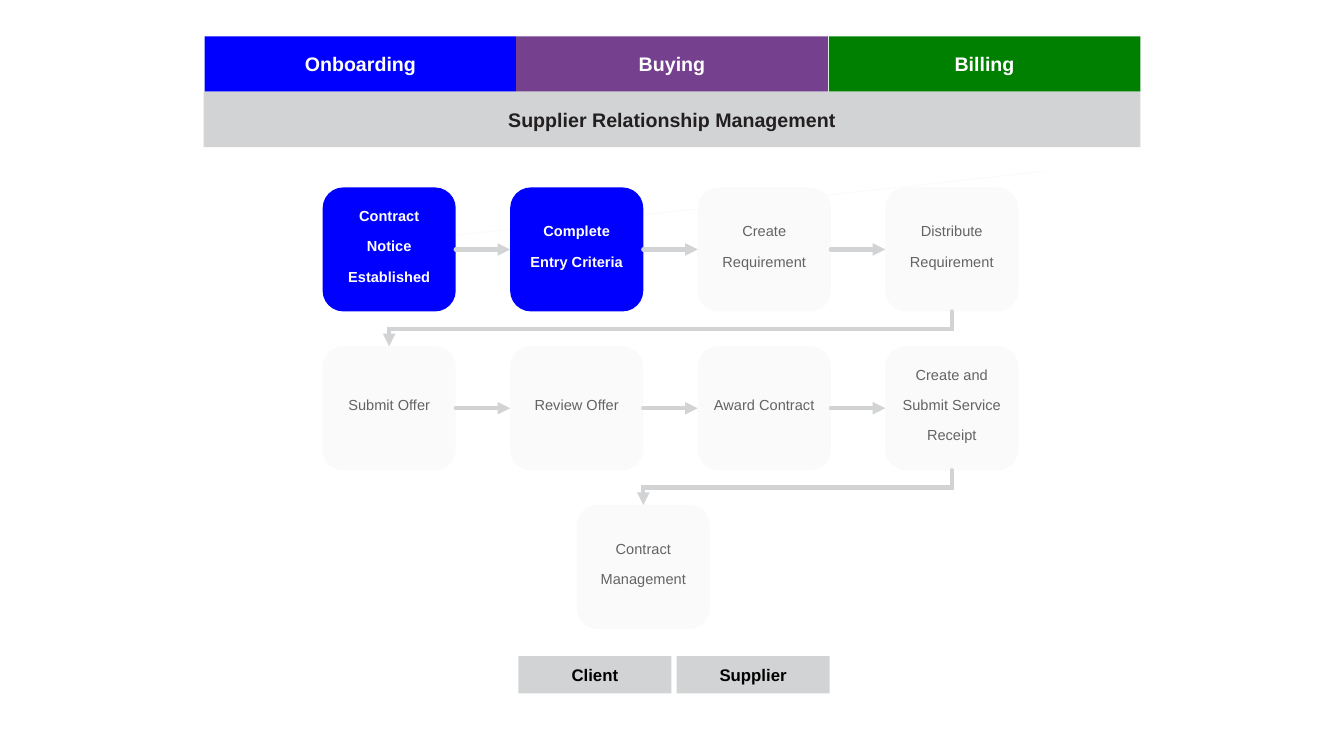
from dataclasses import dataclass

from lxml.etree import SubElement
from pptx import Presentation
from pptx.dml.color import RGBColor
from pptx.enum.shapes import MSO_CONNECTOR as Line, MSO_SHAPE as Shape
from pptx.enum.text import MSO_ANCHOR, PP_ALIGN
from pptx.oxml.ns import qn
from pptx.shapes.autoshape import Shape as AutoShape
from pptx.shapes.connector import Connector
from pptx.util import Inches, Pt

BLUE = RGBColor(0x00, 0x00, 0xFF)
PURPLE = RGBColor(0x75, 0x40, 0x8D)
GREEN = RGBColor(0x00, 0x80, 0x00)
GRAY = RGBColor(0xD1, 0xD3, 0xD4)
PALE = RGBColor(0xFA, 0xFA, 0xFA)
WHITE = RGBColor(0xFF, 0xFF, 0xFF)
BLACK = RGBColor(0x00, 0x00, 0x00)
INK = RGBColor(0x23, 0x1F, 0x20)
STEP_TEXT = RGBColor(0x64, 0x63, 0x63)

STEP_WIDTH, STEP_HEIGHT = 1.32, 1.23
STEP_LEFT, STEP_TOP = 3.2, 1.86
COLUMN_PITCH, ROW_PITCH = 1.86, 1.575
TOP, LEFT, BOTTOM, RIGHT = range(4)


@dataclass
class Bar:
    text: str
    left: float
    top: float
    width: float
    height: float
    fill: RGBColor
    color: RGBColor
    size: int = 14


@dataclass
class Step:
    text: str
    column: float
    row: int
    active: bool = False

    @property
    def left(self) -> float:
        return STEP_LEFT + self.column * COLUMN_PITCH

    @property
    def top(self) -> float:
        return STEP_TOP + self.row * ROW_PITCH

    @property
    def center(self) -> float:
        return self.left + STEP_WIDTH / 2


BARS = [
    Bar("Onboarding", 2.03, 0.36, 3.09, 0.55, BLUE, WHITE),
    Bar("Buying", 5.12, 0.36, 3.09, 0.55, PURPLE, WHITE),
    Bar("Billing", 8.22, 0.36, 3.09, 0.55, GREEN, WHITE),
    Bar("Supplier Relationship Management", 2.02, 0.91, 9.29, 0.55, GRAY, INK),
    Bar("Client", 5.14, 6.51, 1.52, 0.37, GRAY, BLACK, 12),
    Bar("Supplier", 6.71, 6.51, 1.52, 0.37, GRAY, BLACK, 12),
]
STEPS = [
    Step("Contract Notice Established", 0, 0, True),
    Step("Complete Entry Criteria", 1, 0, True),
    Step("Create Requirement", 2, 0),
    Step("Distribute Requirement", 3, 0),
    Step("Submit Offer", 0, 1),
    Step("Review Offer", 1, 1),
    Step("Award Contract", 2, 1),
    Step("Create and Submit Service Receipt", 3, 1),
    Step("Contract Management", 1.355, 2),
]

presentation = Presentation()
presentation.slide_width, presentation.slide_height = Inches(13.33), Inches(7.5)
slide = presentation.slides.add_slide(presentation.slide_layouts[6])


def add_box(kind: Shape, left: float, top: float, width: float, height: float,
            text: str, fill: RGBColor, color: RGBColor, size: int, bold: bool) -> AutoShape:
    shape = slide.shapes.add_shape(kind, Inches(left), Inches(top), Inches(width), Inches(height))
    shape.shadow.inherit = False
    shape.fill.solid()
    shape.fill.fore_color.rgb = fill
    shape.line.fill.background()
    frame = shape.text_frame
    frame.word_wrap = True
    frame.vertical_anchor = MSO_ANCHOR.MIDDLE
    frame.margin_left = frame.margin_right = Inches(0.07)
    paragraph = frame.paragraphs[0]
    paragraph.text = text
    paragraph.alignment = PP_ALIGN.CENTER
    font = paragraph.font
    font.name, font.size, font.bold = "Arial", Pt(size), bold
    font.color.rgb = color
    return shape


def add_step(step: Step) -> AutoShape:
    fill, color = (BLUE, WHITE) if step.active else (PALE, STEP_TEXT)
    shape = add_box(Shape.ROUNDED_RECTANGLE, step.left, step.top, STEP_WIDTH, STEP_HEIGHT,
                    step.text, fill, color, 18, step.active)
    # The step names are raised text
    run = shape.text_frame.paragraphs[0].runs[0]
    run._r.get_or_add_rPr().set("baseline", "30000")
    return shape


def add_line(kind: Line, start: tuple[float, float], end: tuple[float, float],
             color: RGBColor, width: float) -> Connector:
    connector = slide.shapes.add_connector(kind, *map(Inches, start + end))
    connector.line.color.rgb = color
    connector.line.width = Pt(width)
    SubElement(connector._element.spPr, qn("a:effectLst"))
    return connector


def add_arrow(kind: Line, start: tuple[float, float], end: tuple[float, float]) -> Connector:
    connector = add_line(kind, start, end, GRAY, 3)
    outline = connector.line._get_or_add_ln()
    outline.set("cap", "rnd")
    SubElement(outline, qn("a:miter"), lim="800000")
    SubElement(outline, qn("a:tailEnd"), type="triangle")
    return connector


def add_row_arrow(source: Step, target: Step) -> None:
    """Run from the bottom of one row to the top of the next, as a quarter-turned elbow."""
    start_y, end_y = source.top + STEP_HEIGHT, target.top
    middle_x, middle_y = (source.center + target.center) / 2, (start_y + end_y) / 2
    half_drop, half_run = (end_y - start_y) / 2, (source.center - target.center) / 2
    connector = add_arrow(Line.ELBOW, (middle_x - half_drop, middle_y - half_run),
                          (middle_x + half_drop, middle_y + half_run))
    connector._element.spPr.xfrm.set("rot", str(90 * 60000))


# Header and footer bars
for bar in BARS:
    add_box(Shape.RECTANGLE, bar.left, bar.top, bar.width, bar.height,
            bar.text, bar.fill, bar.color, bar.size, True)

# Faint line behind the steps
faint_line = add_line(Line.STRAIGHT, (STEP_LEFT, 2.48), (10.37, 1.7), PALE, 0.5)

# Process steps
step_shapes = [add_step(step) for step in STEPS]
faint_line.begin_connect(step_shapes[0], LEFT)

# Arrows along each row and down to the next
for index, (source, target) in enumerate(zip(STEPS, STEPS[1:])):
    if source.row == target.row:
        arrow = add_arrow(Line.STRAIGHT, (source.left + STEP_WIDTH, source.top + STEP_HEIGHT / 2),
                          (target.left, target.top + STEP_HEIGHT / 2))
        arrow.begin_connect(step_shapes[index], RIGHT)
        arrow.end_connect(step_shapes[index + 1], LEFT)
    else:
        add_row_arrow(source, target)

presentation.save("out.pptx")
